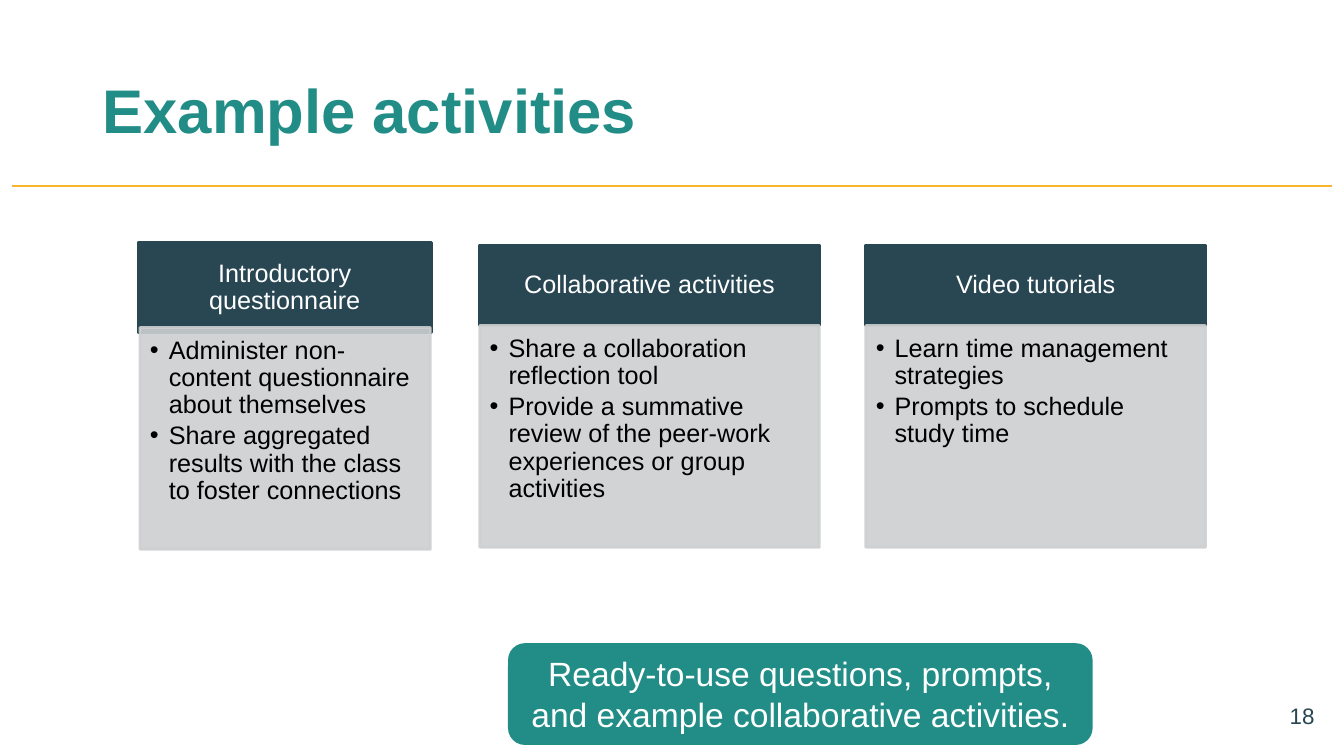
from lxml.etree import SubElement
from pptx import Presentation
from pptx.dml.color import RGBColor
from pptx.enum.shapes import MSO_CONNECTOR, MSO_SHAPE
from pptx.enum.text import MSO_ANCHOR, PP_ALIGN
from pptx.oxml.ns import qn
from pptx.util import Pt

TEAL, NAVY, GOLD = "218D86", "284753", "F8B62F"
GREY, WHITE, BLACK = "CDCFD1", "FFFFFF", "000000"


def color(value):
    return RGBColor.from_string(value)


def set_opacity(fill_parent, percent):
    tone = fill_parent.find(qn("a:solidFill")).find(qn("a:srgbClr"))
    SubElement(tone, qn("a:alpha"), val=str(percent * 1000))


class SlideBuilder:
    font = "Arial"

    def __init__(self, page):
        self.page = page

    def set_text(self, shape, lines, size, tone, align=PP_ALIGN.LEFT, anchor=MSO_ANCHOR.MIDDLE,
                 insets=(7.2, 3.6, 7.2, 3.6), bold=False, spacing=1.0, after=0, bullets=False):
        frame = shape.text_frame
        frame.word_wrap = True
        frame.vertical_anchor = anchor
        frame.margin_left, frame.margin_top, frame.margin_right, frame.margin_bottom = map(Pt, insets)
        frame.text = "\n".join(lines)
        for para in frame.paragraphs:
            if bullets:
                self.bullet(para, tone)
            para.alignment = align
            para.line_spacing = spacing
            para.space_after = Pt(after)
            for span in para.runs:
                span.font.name = self.font
                span.font.size = Pt(size)
                span.font.bold = bold
                span.font.color.rgb = color(tone)

    def bullet(self, para, tone):
        properties = para._p.get_or_add_pPr()
        properties.set("marL", str(Pt(13.5)))
        properties.set("indent", str(Pt(-13.5)))
        SubElement(SubElement(properties, qn("a:buClr")), qn("a:srgbClr"), val=tone)
        SubElement(properties, qn("a:buFont"), typeface=self.font)
        SubElement(properties, qn("a:buChar"), char="•")

    def text(self, place, line, size, tone, **style):
        box = self.page.shapes.add_textbox(*map(Pt, place))
        self.set_text(box, [line], size, tone, **style)

    def panel(self, place, fill, kind=MSO_SHAPE.RECTANGLE, border=2, opacity=100):
        shape = self.page.shapes.add_shape(kind, *map(Pt, place))
        shape.shadow.inherit = False
        shape.fill.solid()
        shape.fill.fore_color.rgb = color(fill)
        if border:
            shape.line.width = Pt(border)
            shape.line.color.rgb = color(fill)
        else:
            shape.line.fill.background()
        if opacity < 100:
            properties = shape._element.spPr
            set_opacity(properties, opacity)
            set_opacity(properties.find(qn("a:ln")), opacity)
        return shape

    def rule(self, left, top, right, tone, width):
        line = self.page.shapes.add_connector(
            MSO_CONNECTOR.STRAIGHT, Pt(left), Pt(top), Pt(right), Pt(top))
        line.line.color.rgb = color(tone)
        line.line.width = Pt(width)
        SubElement(line._element.spPr, qn("a:effectLst"))

    def card(self, heading, points, header_place, body_place):
        header = self.panel(header_place, NAVY)
        self.set_text(header, [heading], 18, WHITE, align=PP_ALIGN.CENTER,
                      insets=(10, 5.75, 10, 5.75), spacing=0.9)
        body = self.panel(body_place, GREY, opacity=90)
        self.set_text(body, points, 18, BLACK, anchor=MSO_ANCHOR.TOP,
                      insets=(7.2, 7.2, 10, 11.5), spacing=0.9, after=2.7, bullets=True)

    def callout(self, place, line):
        shape = self.panel(place, TEAL, kind=MSO_SHAPE.ROUNDED_RECTANGLE, border=0)
        self.set_text(shape, [line], 24, WHITE, align=PP_ALIGN.CENTER, anchor=MSO_ANCHOR.TOP)


CARDS = [
    ("Introductory questionnaire",
     ["Administer non-content questionnaire about themselves",
      "Share aggregated results with the class to foster connections"],
     (98.6, 173.5, 209.5, 64), (100, 234, 207.4, 158.4)),
    ("Collaborative activities",
     ["Share a collaboration reflection tool",
      "Provide a summative review of the peer-work experiences or group activities"],
     (342.7, 175, 242.6, 57.6), (342.7, 232.6, 242.6, 158.4)),
    ("Video tutorials",
     ["Learn time management strategies",
      "Prompts to schedule study time"],
     (618.5, 175, 242.6, 57.6), (618.5, 232.6, 242.6, 158.4)),
]


def main():
    deck = Presentation()
    deck.slide_width, deck.slide_height = Pt(960), Pt(540)
    builder = SlideBuilder(deck.slides.add_slide(deck.slide_layouts[6]))
    builder.rule(8.6, 133.2, 951.8, GOLD, 1.5)
    builder.text((730, 496.8, 216, 28.8), "18", 16, NAVY, align=PP_ALIGN.RIGHT)
    builder.text((66.2, 28.8, 761, 104.4), "Example activities", 44, TEAL, bold=True, spacing=0.9)
    builder.callout((362.9, 459.4, 417.6, 72.7),
                    "Ready-to-use questions, prompts, and example collaborative activities.")
    for card in CARDS:
        builder.card(*card)
    deck.save("out.pptx")


if __name__ == "__main__":
    main()
